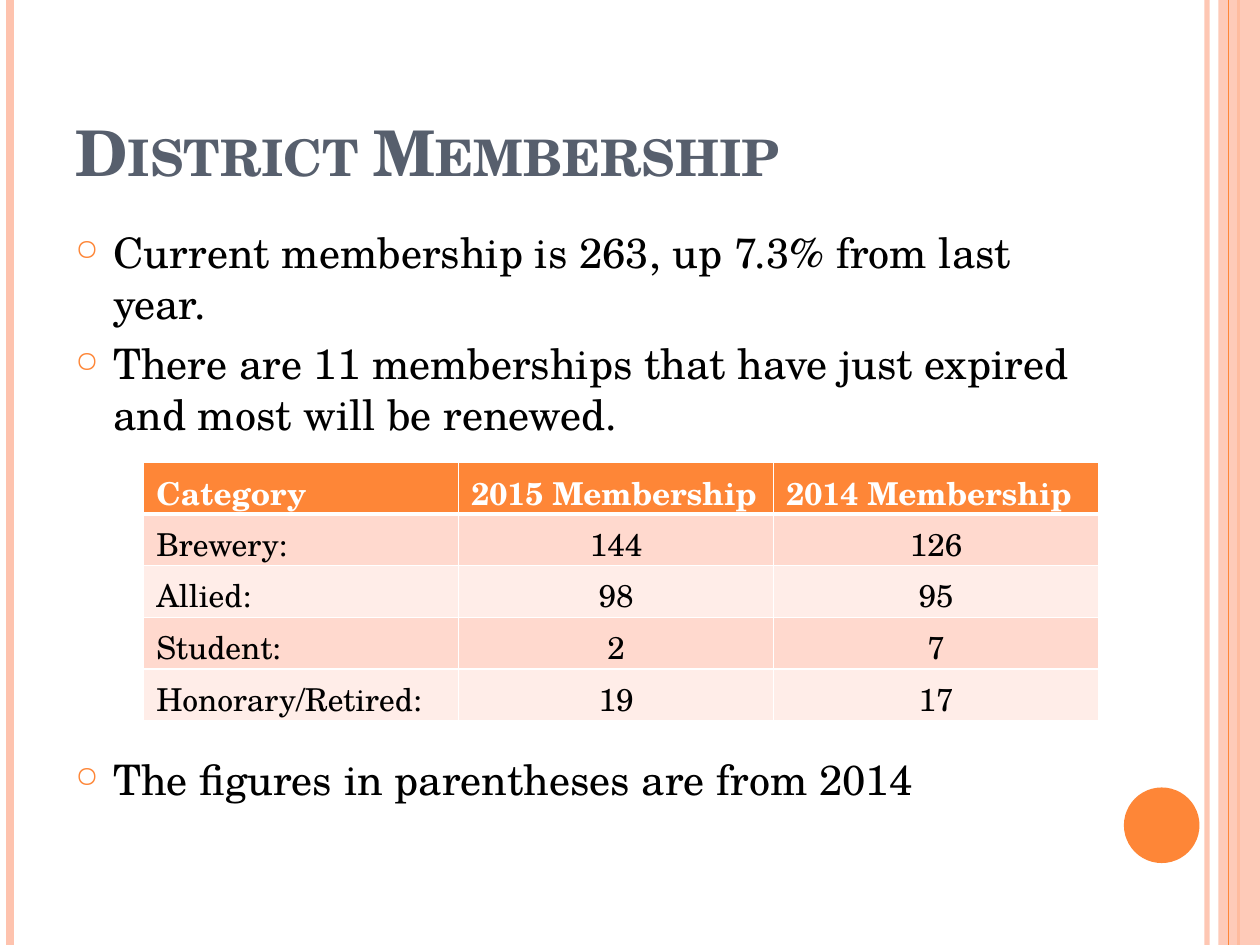
from dataclasses import dataclass
from typing import Optional

import lxml.etree
import pptx
import pptx.dml.color
import pptx.enum.shapes
import pptx.enum.text
import pptx.oxml
import pptx.oxml.ns
import pptx.util

Inches = pptx.util.Inches
Pt = pptx.util.Pt
qn = pptx.oxml.ns.qn


@dataclass(frozen=True)
class Theme:
    font: str = "TeX Gyre Schola"
    accent: str = "FE8637"
    pale: str = "FEC3AE"
    heading: str = "575F6D"
    ink: str = "000000"
    white: str = "FFFFFF"
    bands: tuple = ("FFD9CE", "FFEDE8")
    title_size: int = 36
    body_size: int = 24
    table_size: int = 18


@dataclass(frozen=True)
class Stripe:
    x: float
    width: float
    color: str
    opacity: Optional[int] = None


@dataclass(frozen=True)
class Bullet:
    text: str
    space_before: float = 6


THEME = Theme()
SLIDE_WIDTH, SLIDE_HEIGHT = 10, 7.5

BACK_STRIPES = (
    Stripe(9.58, 3, THEME.pale, 93),
    Stripe(0.08, 4.5, THEME.pale),
    Stripe(9.83, 1.5, THEME.accent),
)
FRONT_STRIPE = Stripe(9.75, 0.75, THEME.accent)

BULLETS = (
    Bullet("Current membership is 263, up 7.3% from last year."),
    Bullet("There are 11 memberships that have just expired and most will be renewed."),
    Bullet("The figures in parentheses are from 2014", space_before=180),
)

MEMBERSHIP = (
    ("Category", "2015 Membership", "2014 Membership"),
    ("Brewery:", "144", "126"),
    ("Allied:", "98", "95"),
    ("Student:", "2", "7"),
    ("Honorary/Retired:", "19", "17"),
)
COLUMN_WIDTHS = (2.5, 2.5, 2.58)
ROW_HEIGHT = 0.41


def rgb(color: str):
    return pptx.dml.color.RGBColor.from_string(color)


def sub(parent, tag: str, **attributes: str):
    return lxml.etree.SubElement(parent, qn(tag), attributes)


def set_opacity(fill_owner, percent: int) -> None:
    """Make the solid fill of a line or shape partly transparent."""
    color = fill_owner.find(qn("a:solidFill")).find(qn("a:srgbClr"))
    sub(color, "a:alpha", val=str(percent * 1000))


def add_run(paragraph, text: str, size: int, color: str, bold: bool = False):
    run = paragraph.add_run()
    run.text = text
    run.font.name = THEME.font
    run.font.size = Pt(size)
    run.font.bold = bold
    run.font.color.rgb = rgb(color)
    return run


def add_stripe(slide, stripe: Stripe) -> None:
    x = Inches(stripe.x)
    line = slide.shapes.add_connector(
        pptx.enum.shapes.MSO_CONNECTOR.STRAIGHT, x, 0, x, Inches(SLIDE_HEIGHT))
    line.line.width = Pt(stripe.width)
    line.line.color.rgb = rgb(stripe.color)
    properties = line._element.spPr
    if stripe.opacity is not None:
        set_opacity(properties.find(qn("a:ln")), stripe.opacity)
    sub(properties, "a:effectLst")


def add_block(slide, kind, left: float, top: float, width: float, height: float,
              color: str):
    block = slide.shapes.add_shape(
        kind, Inches(left), Inches(top), Inches(width), Inches(height))
    block.shadow.inherit = False
    block.fill.solid()
    block.fill.fore_color.rgb = rgb(color)
    block.line.fill.background()
    return block


def add_decoration(slide) -> None:
    shapes = pptx.enum.shapes.MSO_SHAPE
    for stripe in BACK_STRIPES:
        add_stripe(slide, stripe)
    band = add_block(slide, shapes.RECTANGLE, 9.67, 0, 0.33, SLIDE_HEIGHT, THEME.pale)
    set_opacity(band._element.spPr, 87)
    add_stripe(slide, FRONT_STRIPE)
    add_block(slide, shapes.OVAL, 8.92, 6.25, 0.6, 0.6, THEME.accent)


def add_text_frame(slide, top: float, height: float):
    frame = slide.shapes.add_textbox(
        Inches(0.5), Inches(top), Inches(8.17), Inches(height)).text_frame
    frame.word_wrap = True
    return frame


def add_title(slide, text: str) -> None:
    frame = add_text_frame(slide, 0.3, 1.25)
    frame.vertical_anchor = pptx.enum.text.MSO_ANCHOR.BOTTOM
    run = add_run(frame.paragraphs[0], text, THEME.title_size, THEME.heading, bold=True)
    run.font._element.set("cap", "small")


def add_bullets(slide, bullets: tuple[Bullet, ...]) -> None:
    frame = add_text_frame(slide, 1.75, 5.33)
    for index, bullet in enumerate(bullets):
        paragraph = frame.add_paragraph() if index else frame.paragraphs[0]
        paragraph.space_before = Pt(bullet.space_before)
        properties = paragraph._p.get_or_add_pPr()
        properties.set("marL", str(Inches(0.3)))
        properties.set("indent", str(Inches(-0.3)))
        sub(sub(properties, "a:buClr"), "a:srgbClr", val=THEME.accent)
        sub(properties, "a:buSzPct", val="70000")
        sub(properties, "a:buChar", char="○")
        add_run(paragraph, bullet.text, THEME.body_size, THEME.ink)


def set_borders(cell, is_header: bool, below_header: bool) -> None:
    """Draw white borders, heavier between the header and the first row."""
    properties = cell._tc.get_or_add_tcPr()
    widths = {"a:lnL": 1, "a:lnR": 1,
              "a:lnT": 3 if below_header else 1, "a:lnB": 3 if is_header else 1}
    for tag, width in widths.items():
        border = sub(properties, tag, w=str(Pt(width)))
        sub(sub(border, "a:solidFill"), "a:srgbClr", val=THEME.white)


def add_membership_table(slide) -> None:
    table = slide.shapes.add_table(
        len(MEMBERSHIP), len(COLUMN_WIDTHS), Inches(1.14), Inches(3.67),
        Inches(sum(COLUMN_WIDTHS)), Inches(ROW_HEIGHT * len(MEMBERSHIP))).table
    for column, width in zip(table.columns, COLUMN_WIDTHS):
        column.width = Inches(width)
    for row, values in enumerate(MEMBERSHIP):
        is_header = row == 0
        fill = THEME.accent if is_header else THEME.bands[(row - 1) % 2]
        color = THEME.white if is_header else THEME.ink
        for column, value in enumerate(values):
            cell = table.cell(row, column)
            set_borders(cell, is_header, below_header=row == 1)
            cell.fill.solid()
            cell.fill.fore_color.rgb = rgb(fill)
            paragraph = cell.text_frame.paragraphs[0]
            if column and not is_header:
                paragraph.alignment = pptx.enum.text.PP_ALIGN.CENTER
            add_run(paragraph, value, THEME.table_size, color, bold=is_header)


def main() -> None:
    deck = pptx.Presentation()
    deck.slide_width = Inches(SLIDE_WIDTH)
    deck.slide_height = Inches(SLIDE_HEIGHT)
    slide = deck.slides.add_slide(deck.slide_layouts[6])
    add_decoration(slide)
    add_title(slide, "District Membership")
    add_bullets(slide, BULLETS)
    add_membership_table(slide)
    deck.save("out.pptx")


if __name__ == "__main__":
    main()
